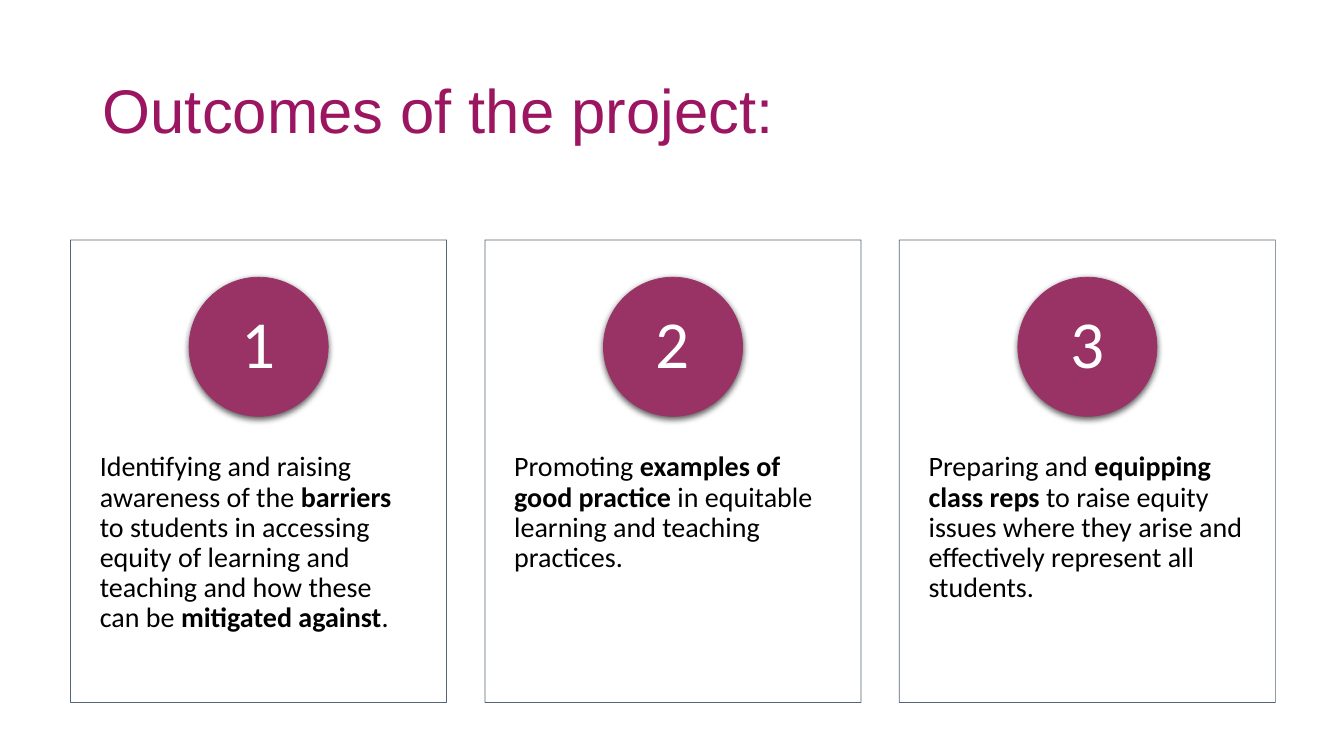
from lxml import etree
from pptx import Presentation
from pptx import util as u
from pptx.dml.color import RGBColor
from pptx.enum import shapes, text
from pptx.oxml.ns import qn

PLUM = RGBColor(0x99, 0x33, 0x66)
MAGENTA = RGBColor(0x9C, 0x15, 0x60)
SLATE = RGBColor(0x44, 0x54, 0x6A)
WHITE = RGBColor(0xFF, 0xFF, 0xFF)
BLACK = RGBColor(0, 0, 0)

OUTCOMES = [
    [("Identifying and raising awareness of the ", False), ("barriers ", True),
     ("to students in accessing equity of learning and teaching and how these can be ", False),
     ("mitigated against", True), (".", False)],
    [("Promoting ", False), ("examples of good practice ", True),
     ("in equitable learning and teaching practices.", False)],
    [("Preparing and ", False), ("equipping class reps ", True),
     ("to raise equity issues where they arise and effectively represent all students.", False)],
]
CARD_LEFT, CARD_TOP, CARD_PITCH = 0.7, 2.38, 4.11
CARD_WIDTH, CARD_HEIGHT = 3.73, 4.59
BADGE, NUMBER = 1.38, 0.97
BADGE_TOP = 2.75
WORDING_TOP, WORDING_HEIGHT = 4.13, 2.75


class OutcomeSlide:
    heading_font = "Arial"
    body_font = "Calibri"

    def __init__(self, deck):
        self.slide = deck.slides.add_slide(deck.slide_layouts[5])

    def fill_text(self, frame, runs, size, color, font, align, anchor, insets):
        frame.word_wrap = True
        frame.auto_size = text.MSO_AUTO_SIZE.NONE
        frame.vertical_anchor = anchor
        frame.margin_left = frame.margin_right = u.Inches(insets[0])
        frame.margin_top = frame.margin_bottom = u.Inches(insets[1])
        paragraph = frame.paragraphs[0]
        paragraph.alignment = align
        paragraph.line_spacing = 0.9
        for wording, bold in runs:
            run = paragraph.add_run()
            run.text = wording
            run.font.name = font
            run.font.size = u.Pt(size)
            run.font.bold = bold
            run.font.color.rgb = color

    def title(self, wording):
        heading = self.slide.shapes.title
        heading.left, heading.top = u.Inches(0.92), u.Inches(0.4)
        heading.width, heading.height = u.Inches(11.5), u.Inches(1.45)
        self.fill_text(heading.text_frame, [(wording, False)], 44, MAGENTA, self.heading_font,
                       text.PP_ALIGN.LEFT, text.MSO_ANCHOR.MIDDLE, (0.1, 0.05))

    def shape(self, kind, left, top, width, height, fill, line, weight):
        figure = self.slide.shapes.add_shape(
            kind, u.Inches(left), u.Inches(top), u.Inches(width), u.Inches(height))
        figure.shadow.inherit = False
        figure.fill.solid()
        figure.fill.fore_color.rgb = fill
        figure.line.color.rgb = line
        figure.line.width = u.Pt(weight)
        return figure

    def card(self, left):
        frame = self.shape(shapes.MSO_SHAPE.RECTANGLE, left, CARD_TOP,
                           CARD_WIDTH, CARD_HEIGHT, WHITE, SLATE, 0.5)
        for color in frame._element.spPr.iter(qn("a:srgbClr")):
            etree.SubElement(color, qn("a:alpha"), val="90000")

    def wording(self, left, runs):
        box = self.slide.shapes.add_textbox(
            u.Inches(left), u.Inches(WORDING_TOP), u.Inches(CARD_WIDTH), u.Inches(WORDING_HEIGHT))
        self.fill_text(box.text_frame, runs, 20, BLACK, self.body_font,
                       text.PP_ALIGN.LEFT, text.MSO_ANCHOR.TOP, (0.29, 0.36))

    def badge(self, center, number):
        circle = self.shape(shapes.MSO_SHAPE.OVAL, center - BADGE / 2, BADGE_TOP,
                            BADGE, BADGE, PLUM, PLUM, 0.5)
        effects = circle._element.spPr.find(qn("a:effectLst"))
        shadow = etree.SubElement(effects, qn("a:outerShdw"), blurRad=str(u.Pt(4.5)),
                                  dist=str(u.Pt(1.5)), dir="5400000", rotWithShape="0")
        color = etree.SubElement(shadow, qn("a:srgbClr"), val=str(BLACK))
        etree.SubElement(color, qn("a:alpha"), val="63000")
        label = self.shape(shapes.MSO_SHAPE.RECTANGLE, center - NUMBER / 2,
                           BADGE_TOP + (BADGE - NUMBER) / 2, NUMBER, NUMBER, PLUM, PLUM, 0.75)
        self.fill_text(label.text_frame, [(str(number), False)], 48, WHITE, self.body_font,
                       text.PP_ALIGN.CENTER, text.MSO_ANCHOR.MIDDLE, (0.11, 0.01))


def main():
    deck = Presentation()
    deck.slide_width, deck.slide_height = u.Inches(13.33), u.Inches(7.5)
    page = OutcomeSlide(deck)
    page.title("Outcomes of the project:")
    for index, runs in enumerate(OUTCOMES):
        left = CARD_LEFT + index * CARD_PITCH
        page.card(left)
        page.wording(left, runs)
        page.badge(left + CARD_WIDTH / 2, index + 1)
    deck.save("out.pptx")


if __name__ == "__main__":
    main()
